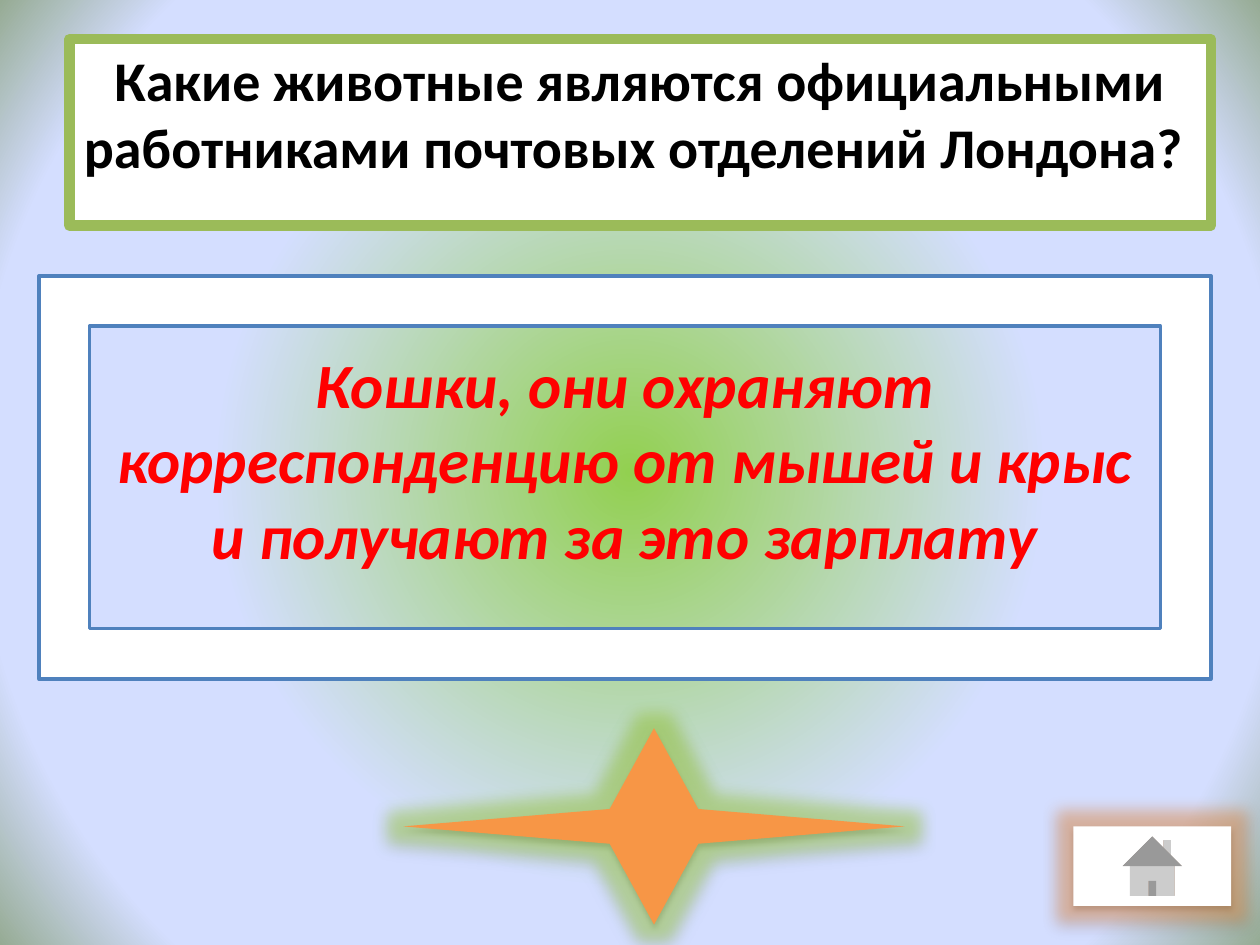
from dataclasses import dataclass
from typing import Optional

from lxml.etree import SubElement
from pptx import Presentation
from pptx.dml.color import RGBColor
from pptx.enum.shapes import MSO_SHAPE
from pptx.enum.text import MSO_ANCHOR, PP_ALIGN
from pptx.oxml import parse_xml
from pptx.oxml.ns import nsdecls, qn
from pptx.util import Cm, Pt


@dataclass(frozen=True)
class Theme:
    font: str = "Calibri"
    question_size: int = 32
    answer_size: int = 36
    white: str = "FFFFFF"
    black: str = "000000"
    red: str = "FF0000"
    green: str = "9BBB59"
    blue: str = "4F81BD"
    orange: str = "F79646"
    backdrop: tuple = ((0, "92D050", 67), (53, "D4DEFF", 100),
                       (83, "D4DEFF", 100), (100, "96AB94", 100))


@dataclass(frozen=True)
class Panel:
    kind: MSO_SHAPE
    left: float
    top: float
    width: float
    height: float
    fill: str
    line: Optional[str] = None
    line_width: float = 0
    glow: Optional[str] = None


@dataclass(frozen=True)
class Caption:
    paragraphs: tuple
    size: int
    color: str
    italic: bool = False
    anchor: MSO_ANCHOR = MSO_ANCHOR.TOP
    bottom_inset: float = 0.13


THEME = Theme()
QUESTION = Panel(MSO_SHAPE.RECTANGLE, 1.4, 0.79, 23.01, 3.76, THEME.white, THEME.green, 6)
STAR = Panel(MSO_SHAPE.STAR_4_POINT, 8.13, 14.68, 10.11, 3.96, THEME.orange, glow=THEME.green)
ANSWER = Panel(MSO_SHAPE.FRAME, 0.79, 5.56, 23.62, 8.13, THEME.white, THEME.blue, 2)
HOME = Panel(MSO_SHAPE.ACTION_BUTTON_HOME, 21.64, 16.66, 3.18, 1.6, THEME.white, glow=THEME.orange)

QUESTION_TEXT = Caption(
    ("Какие животные являются официальными работниками почтовых отделений Лондона? ",),
    THEME.question_size, THEME.black)
ANSWER_TEXT = Caption(
    ("Кошки, они охраняют корреспонденцию от мышей и крыс",
     "и получают за это зарплату"),
    THEME.answer_size, THEME.red, True, MSO_ANCHOR.MIDDLE, 0.89)


def paint_background(slide, stops: tuple) -> None:
    """Fill the slide with a circular gradient around its centre."""
    slide.background.fill.solid()
    properties = slide.background._cSld.bg.bgPr
    listed = "".join(
        f'<a:gs pos="{position * 1000}"><a:srgbClr val="{color}">'
        f'<a:alpha val="{alpha * 1000}"/></a:srgbClr></a:gs>'
        for position, color, alpha in stops)
    gradient = parse_xml(
        f'<a:gradFill {nsdecls("a")} rotWithShape="1"><a:gsLst>{listed}</a:gsLst>'
        '<a:path path="circle"><a:fillToRect l="50000" t="50000" r="50000" b="50000"/>'
        '</a:path></a:gradFill>')
    properties.replace(properties.find(qn("a:solidFill")), gradient)


def add_glow(shape, color: str) -> None:
    """Give a shape a coloured glow and a soft shadow below it."""
    effects = shape._element.spPr.find(qn("a:effectLst"))
    glow = SubElement(effects, qn("a:glow"), rad=str(Pt(18)))
    shadow = SubElement(effects, qn("a:outerShdw"), blurRad=str(Pt(3.5)),
                        dist=str(Pt(2.2)), dir="5400000", algn="ctr", rotWithShape="0")
    for effect, tint, alpha in ((glow, color, 40), (shadow, THEME.black, 32)):
        shade = SubElement(effect, qn("a:srgbClr"), val=tint)
        if effect is glow:
            SubElement(shade, qn("a:satMod"), val="175000")
        SubElement(shade, qn("a:alpha"), val=str(alpha * 1000))


def draw_panel(slide, panel: Panel):
    """Draw one preset shape and return it."""
    shape = slide.shapes.add_shape(panel.kind, Cm(panel.left), Cm(panel.top),
                                   Cm(panel.width), Cm(panel.height))
    shape.shadow.inherit = False
    shape.fill.solid()
    shape.fill.fore_color.rgb = RGBColor.from_string(panel.fill)
    if panel.line:
        shape.line.color.rgb = RGBColor.from_string(panel.line)
        shape.line.width = Pt(panel.line_width)
    else:
        shape.line.fill.background()
    if panel.glow:
        add_glow(shape, panel.glow)
    return shape


def write_caption(shape, caption: Caption) -> None:
    """Write centred bold text into a shape."""
    frame = shape.text_frame
    frame.word_wrap = True
    frame.vertical_anchor = caption.anchor
    frame.margin_bottom = Cm(caption.bottom_inset)
    frame.text = "\n".join(caption.paragraphs)
    for paragraph in frame.paragraphs:
        paragraph.alignment = PP_ALIGN.CENTER
        for run in paragraph.runs:
            run.font.name = THEME.font
            run.font.size = Pt(caption.size)
            run.font.bold = True
            run.font.italic = caption.italic
            run.font.color.rgb = RGBColor.from_string(caption.color)


def main() -> None:
    """Build the quiz slide and save it."""
    deck = Presentation()
    deck.slide_width, deck.slide_height = Cm(25.4), Cm(19.05)
    slide = deck.slides.add_slide(deck.slide_layouts[6])
    paint_background(slide, THEME.backdrop)
    for panel, caption in ((QUESTION, QUESTION_TEXT), (STAR, None),
                           (ANSWER, ANSWER_TEXT), (HOME, None)):
        shape = draw_panel(slide, panel)
        if caption:
            write_caption(shape, caption)
    deck.save("out.pptx")


if __name__ == "__main__":
    main()
